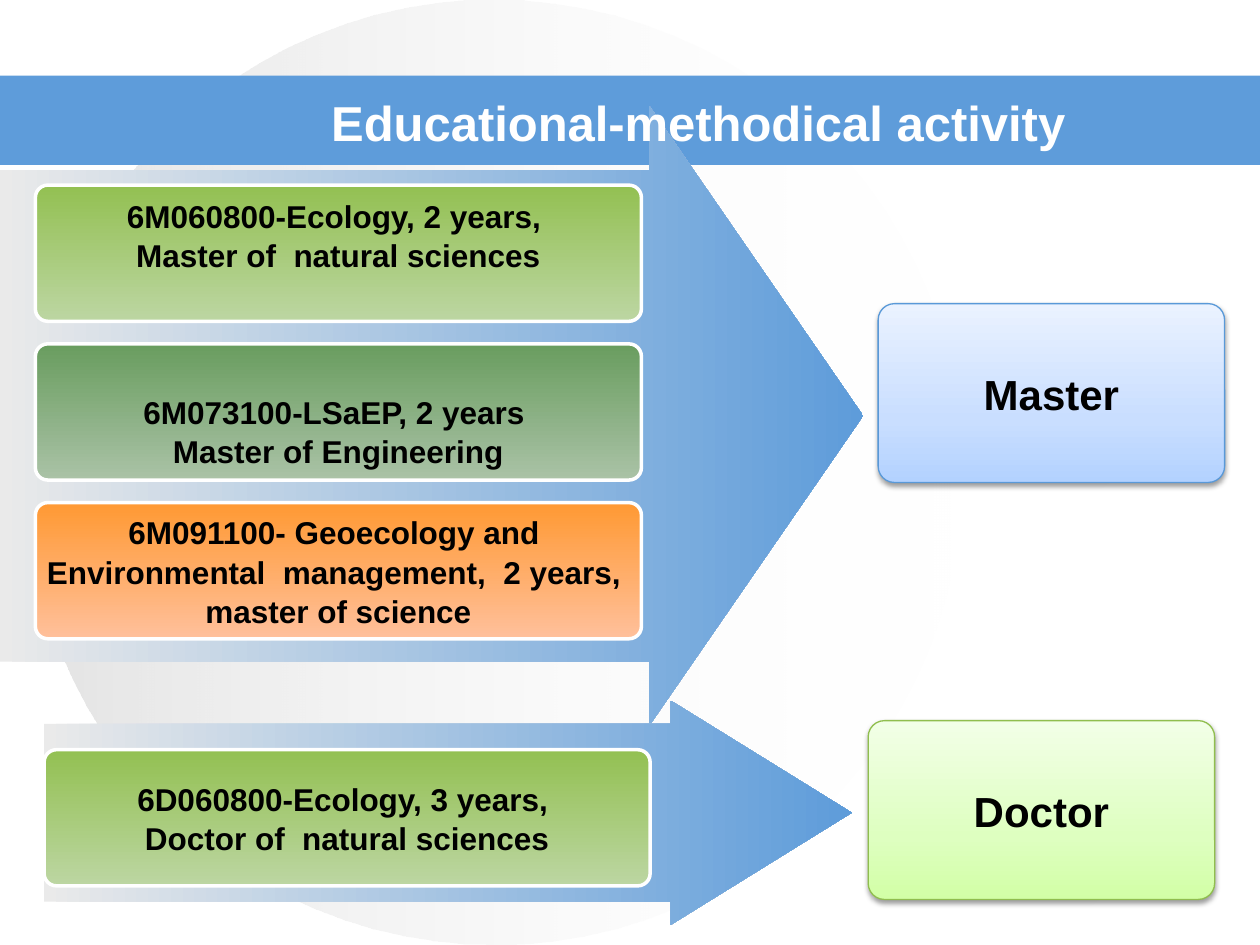
from lxml.etree import SubElement
from pptx import Presentation
from pptx.dml.color import RGBColor
from pptx.enum.shapes import MSO_SHAPE as SHAPE
from pptx.enum.text import MSO_ANCHOR as ANCHOR, PP_ALIGN as ALIGN
from pptx.oxml.ns import qn
from pptx.util import Pt

BLACK = RGBColor(0x00, 0x00, 0x00)
WHITE = RGBColor(0xFF, 0xFF, 0xFF)
SILVER = RGBColor(0xC0, 0xC0, 0xC0)
MIST = RGBColor(0xEA, 0xEA, 0xEA)
BLUE = RGBColor(0x5E, 0x9C, 0xDA)
BLUE_LINE = RGBColor(0x59, 0x99, 0xD8)
LIME_LINE = RGBColor(0x90, 0xBE, 0x4E)

# Gradient stops: position %, colour, opacity %
DISC = [(0, SILVER, 44), (100, WHITE, 0)]
ARROW = [(0, MIST, 100), (100, BLUE, 100)]
GREEN = [(0, RGBColor(0x93, 0xC0, 0x52), 100), (100, RGBColor(0xBC, 0xD6, 0xA2), 100)]
FOREST = [(0, RGBColor(0x69, 0x9D, 0x5F), 100), (100, RGBColor(0xAA, 0xC2, 0xA6), 100)]
ORANGE = [(0, RGBColor(0xFF, 0x99, 0x33), 100), (100, RGBColor(0xFF, 0xC0, 0x9B), 100)]
SKY = [(0, RGBColor(0xB3, 0xD2, 0xFF), 100), (35, RGBColor(0xC9, 0xDE, 0xFF), 100),
       (100, RGBColor(0xEA, 0xF2, 0xFF), 100)]
LIME = [(0, RGBColor(0xD2, 0xFF, 0xA6), 100), (35, RGBColor(0xDE, 0xFF, 0xC0), 100),
        (100, RGBColor(0xF2, 0xFF, 0xE7), 100)]

CARD_W, CARD_H, CARD_PITCH = 346.3, 77.8, 90.7
OUTCOME_W, OUTCOME_H = 198, 102.2
CORNER = 0.091
INSET, LINE = 3.6, 21


def add_shape(s, kind, box, line=None, width=0):
    sp = s.shapes.add_shape(kind, *map(Pt, box))
    sp.shadow.inherit = False
    if line is None:
        sp.line.fill.background()
    else:
        sp.line.color.rgb = line
        sp.line.width = Pt(width)
    return sp


def fill_gradient(sp, stops, angle):
    """Fill with any number of stops; angle runs clockwise from left-to-right."""
    sp.fill.gradient()
    grad = sp._element.spPr.find(qn("a:gradFill"))
    stop_list = grad.find(qn("a:gsLst"))
    for old in list(stop_list):
        stop_list.remove(old)
    for pos, color, opacity in stops:
        gs = SubElement(stop_list, qn("a:gs"), pos=str(pos * 1000))
        clr = SubElement(gs, qn("a:srgbClr"), val=str(color))
        if opacity < 100:
            SubElement(clr, qn("a:alpha"), val=str(opacity * 1000))
    grad.find(qn("a:lin")).set("ang", str(angle * 60000))


def add_soft_shadow(sp):
    effects = sp._element.spPr.find(qn("a:effectLst"))
    shadow = SubElement(effects, qn("a:outerShdw"), blurRad=str(Pt(3.1)),
                        dist=str(Pt(1.6)), dir="5400000", rotWithShape="0")
    clr = SubElement(shadow, qn("a:srgbClr"), val=str(BLACK))
    SubElement(clr, qn("a:alpha"), val="38000")


def write_lines(sp, lines, size, color, wrap=True):
    tf = sp.text_frame
    tf.word_wrap = wrap
    tf.vertical_anchor = ANCHOR.MIDDLE
    for i, line in enumerate(lines):
        p = tf.paragraphs[0] if i == 0 else tf.add_paragraph()
        p.alignment = ALIGN.CENTER
        p.line_spacing = 1.04
        r = p.add_run()
        r.text = line
        r.font.name = "Arial"
        r.font.size = Pt(size)
        r.font.bold = True
        r.font.color.rgb = color


def background_disc(s, box):
    fill_gradient(add_shape(s, SHAPE.OVAL, box), DISC, 0)


def title_band(s, box):
    band = add_shape(s, SHAPE.RECTANGLE, box)
    band.fill.solid()
    band.fill.fore_color.rgb = BLUE


def title(s, box):
    x, y, w, h = box
    tb = s.shapes.add_textbox(Pt(x + 162), Pt(y), Pt(474), Pt(h))
    write_lines(tb, ["Educational-methodical activity"], 28, WHITE)


def card(s, x, y, stops, lines, lift):
    """Programme card; lift raises the text by half a line per unit."""
    sp = add_shape(s, SHAPE.ROUNDED_RECTANGLE, (x, y, CARD_W, CARD_H), WHITE, 2)
    sp.adjustments[0] = CORNER
    fill_gradient(sp, stops, 90)
    write_lines(sp, lines, 18, BLACK, wrap=False)
    sp.text_frame.margin_top = Pt(INSET + LINE * max(-lift, 0))
    sp.text_frame.margin_bottom = Pt(INSET + LINE * max(lift, 0))


def outcome(s, x, y, name, stops, line):
    sp = add_shape(s, SHAPE.ROUNDED_RECTANGLE, (x, y, OUTCOME_W, OUTCOME_H), line, 0.75)
    sp.adjustments[0] = CORNER
    fill_gradient(sp, stops, 270)
    add_soft_shadow(sp)
    write_lines(sp, [name], 24, BLACK)


def pathway(s, box, head, cards_at, cards, outcome_at, degree):
    """Arrow filling the box, its stacked cards, and the degree it leads to."""
    x, y, w, h = box
    arrow = add_shape(s, SHAPE.RIGHT_ARROW, box)
    arrow.adjustments[0], arrow.adjustments[1] = 0.793, head
    fill_gradient(arrow, ARROW, 0)
    for i, (stops, lines, lift) in enumerate(cards):
        card(s, x + cards_at[0], y + cards_at[1] + i * CARD_PITCH, stops, lines, lift)
    outcome(s, x + w + outcome_at[0], y + outcome_at[1], *degree)


MASTER_CARDS = [
    (GREEN, ["6M060800-Ecology, 2 years, ", "Master of  natural sciences"], 1),
    (FOREST, ["6M073100-LSaEP, 2 years ", "Master of Engineering"], -1),
    (ORANGE, ["6M091100- Geoecology and ", "Environmental  management,  2 years, ",
              "master of science"], 0),
]
DOCTOR_CARDS = [
    (GREEN, ["6D060800-Ecology, 3 years, ", "Doctor of  natural sciences"], 0),
]


def main():
    prs = Presentation()
    prs.slide_width, prs.slide_height = Pt(720), Pt(540)
    s = prs.slides.add_slide(prs.slide_layouts[6])
    band = (0, 43.2, 720, 51.1)
    background_disc(s, (14.4, 0, 535.7, 540))
    title_band(s, band)
    pathway(s, (0, 60.5, 493.2, 354.2), 0.345, (20.2, 45.3), MASTER_CARDS,
            (8.6, 113), ("Master", SKY, BLUE_LINE))
    pathway(s, (25.2, 400.3, 461.5, 128.2), 0.807, (0, 28.1), DOCTOR_CARDS,
            (9.4, 11.5), ("Doctor", LIME, LIME_LINE))
    title(s, band)
    prs.save("out.pptx")


if __name__ == "__main__":
    main()
